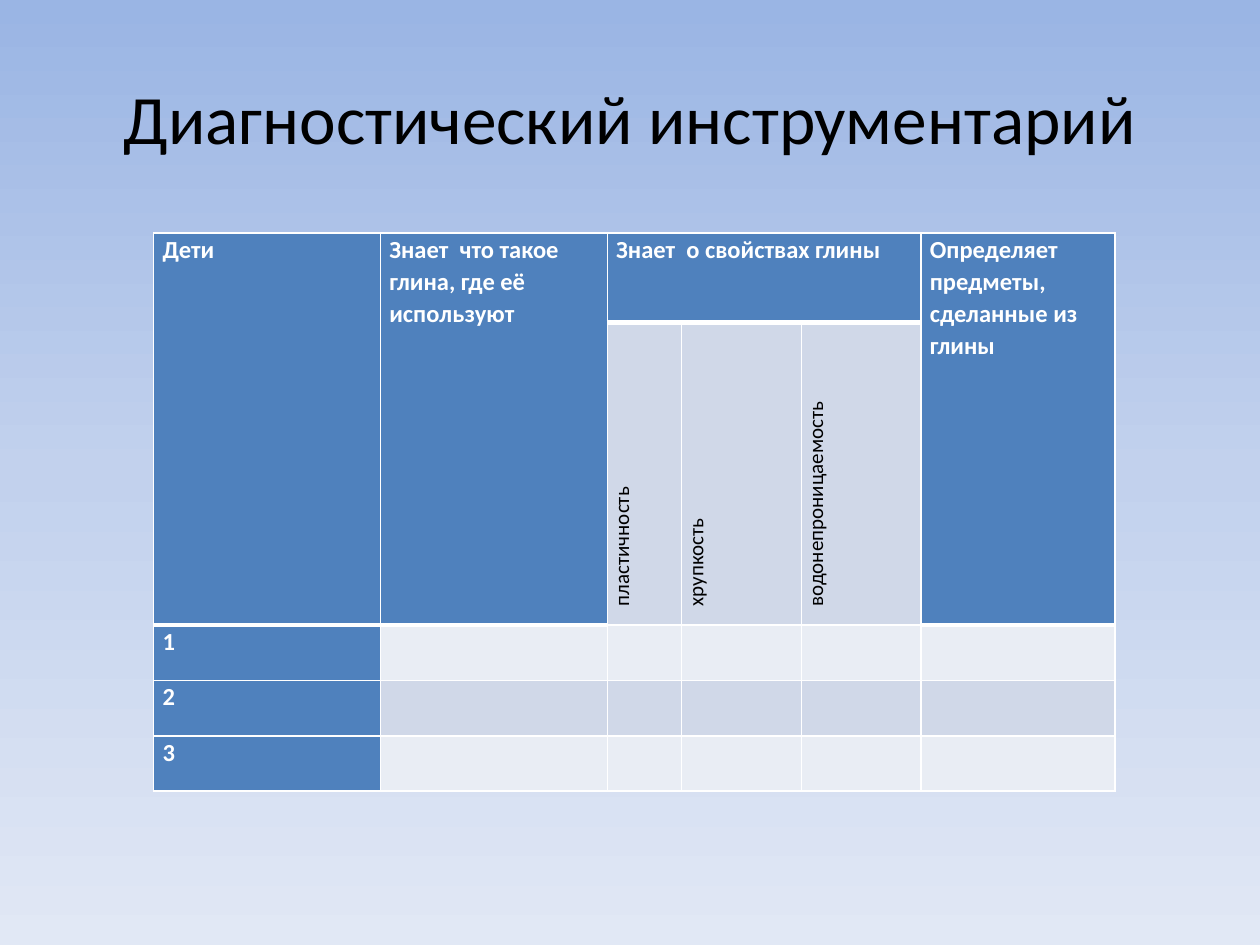
from copy import deepcopy
from dataclasses import dataclass

from pptx import Presentation
from pptx.dml.color import RGBColor
from pptx.enum.text import MSO_ANCHOR, PP_ALIGN
from pptx.oxml.ns import qn
from pptx.oxml.xmlchemy import OxmlElement
from pptx.util import Inches, Pt

FONT = "Calibri"
WHITE, BLACK, BLUE = "FFFFFF", "000000", "4F81BD"
DARK_BAND, LIGHT_BAND = "D0D8E8", "E9EDF4"
COLUMN_WIDTHS = [1.8, 1.8, 0.59, 0.95, 0.95, 1.54]
ROW_HEIGHTS = [0.71, 2.4, 0.44, 0.44, 0.44]
PROPERTY_COLUMNS = range(2, 5)
THIN, THICK = 1, 3


@dataclass
class Header:
    column: int
    text: str
    rows: int = 2
    columns: int = 1


HEADERS = [
    Header(0, "Дети"),
    Header(1, "Знает  что такое глина, где её  используют"),
    Header(2, "Знает  о свойствах глины", rows=1, columns=3),
    Header(5, "Определяет предметы, сделанные из глины"),
]
PROPERTIES = ["пластичность", "хрупкость", "водонепроницаемость"]


def rgb(value: str) -> RGBColor:
    return RGBColor.from_string(value)


def write(frame, text: str, *, size: float, color: str, bold: bool = False,
          align=PP_ALIGN.LEFT, spacing: float = 1.0, indent: float = 0) -> None:
    para = frame.paragraphs[0]
    para.alignment = align
    para.line_spacing = spacing
    if indent:
        para._p.get_or_add_pPr().set("marL", str(Inches(indent)))
    span = para.add_run()
    span.text = text
    span.font.name = FONT
    span.font.size = Pt(size)
    span.font.bold = bold
    span.font.color.rgb = rgb(color)


def paint_background(page, colors: list[str]) -> None:
    """Fill the page from top to bottom with evenly spaced colours."""
    fill = page.background.fill
    fill.gradient()
    fill.gradient_angle = 270
    stops = page._element.find(".//" + qn("a:gsLst"))
    while len(stops) < len(colors):
        stops.append(deepcopy(stops[0]))
    for index, (stop, color) in enumerate(zip(fill.gradient_stops, colors)):
        stop.color.rgb = rgb(color)
        stop.position = index / (len(colors) - 1)


def add_border(cell, side: str, width: float) -> None:
    line = OxmlElement(f"a:ln{side}")
    line.set("w", str(Pt(width)))
    solid = OxmlElement("a:solidFill")
    color = OxmlElement("a:srgbClr")
    color.set("val", WHITE)
    solid.append(color)
    line.append(solid)
    cell._tc.get_or_add_tcPr().append(line)


def format_cell(cell, row: int, column: int) -> None:
    header_end = 0 if column in PROPERTY_COLUMNS else 1
    top = THICK if row == header_end + 1 else THIN
    bottom = THICK if row <= header_end else THIN
    for side, width in zip("LRTB", (THIN, THIN, top, bottom)):
        add_border(cell, side, width)
    cell.margin_left = cell.margin_right = Inches(0.07)
    cell.margin_top = cell.margin_bottom = 0
    is_header = row <= header_end or column == 0
    band = DARK_BAND if row % 2 else LIGHT_BAND
    cell.fill.solid()
    cell.fill.fore_color.rgb = rgb(BLUE if is_header else band)


def add_diagnostic_table(page) -> None:
    frame = page.shapes.add_table(
        len(ROW_HEIGHTS), len(COLUMN_WIDTHS), Inches(1.22), Inches(1.85),
        Inches(sum(COLUMN_WIDTHS)), Inches(sum(ROW_HEIGHTS)))
    table = frame.table
    for column, width in zip(table.columns, COLUMN_WIDTHS):
        column.width = Inches(width)
    for row, height in zip(table.rows, ROW_HEIGHTS):
        row.height = Inches(height)
    for row in range(len(ROW_HEIGHTS)):
        for column in range(len(COLUMN_WIDTHS)):
            format_cell(table.cell(row, column), row, column)

    heading = dict(size=14, color=WHITE, bold=True, spacing=1.07)
    for header in HEADERS:
        cell = table.cell(0, header.column)
        cell.merge(table.cell(header.rows - 1, header.column + header.columns - 1))
        write(cell.text_frame, header.text, **heading)
    for column, name in zip(PROPERTY_COLUMNS, PROPERTIES):
        cell = table.cell(1, column)
        cell._tc.get_or_add_tcPr().set("vert", "vert270")
        write(cell.text_frame, name, size=12, color=BLACK, spacing=1.07, indent=0.08)
    for number in range(1, 4):
        write(table.cell(number + 1, 0).text_frame, str(number), **heading)


def main() -> None:
    deck = Presentation()
    deck.slide_width, deck.slide_height = Inches(10), Inches(7.5)
    page = deck.slides.add_slide(deck.slide_layouts[5])
    paint_background(page, ["9AB5E4", "C2D1ED", "E1E8F5"])

    title = page.shapes.title
    title.left, title.top = Inches(0.5), Inches(0.3)
    title.width, title.height = Inches(9), Inches(1.25)
    title.text_frame.vertical_anchor = MSO_ANCHOR.MIDDLE
    write(title.text_frame, "Диагностический инструментарий",
          size=39.6, color=BLACK, align=PP_ALIGN.CENTER)

    add_diagnostic_table(page)
    deck.save("out.pptx")


if __name__ == "__main__":
    main()
